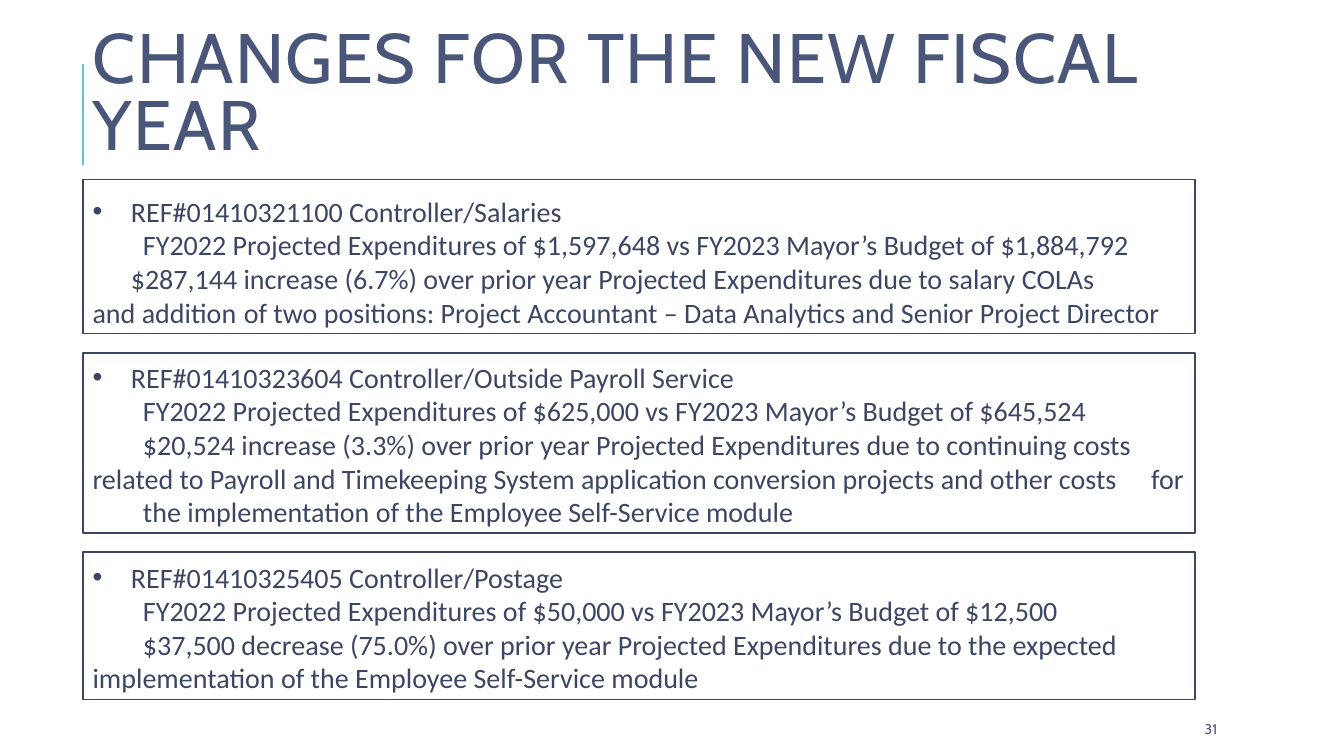
from dataclasses import dataclass

from lxml import etree
from pptx import Presentation
from pptx.dml.color import RGBColor
from pptx.enum.shapes import MSO_CONNECTOR, MSO_SHAPE
from pptx.enum.text import MSO_ANCHOR, MSO_AUTO_SIZE, PP_ALIGN
from pptx.oxml.ns import qn
from pptx.util import Inches, Pt

STRAIGHT = MSO_CONNECTOR.STRAIGHT
RECTANGLE = MSO_SHAPE.RECTANGLE
MIDDLE, BOTTOM = MSO_ANCHOR.MIDDLE, MSO_ANCHOR.BOTTOM
NO_AUTOFIT = MSO_AUTO_SIZE.NONE
LEFT = PP_ALIGN.LEFT
TITLE_ONLY = 5


@dataclass(frozen=True)
class Theme:
    title_font: str = "Cabin"
    body_font: str = "Calibri"
    title_size: int = 50
    body_size: int = 20
    number_size: int = 10
    title_color: str = "495579"
    body_color: str = "3C4663"
    accent: str = "62C7CD"
    paper: str = "FFFFFF"


THEME = Theme()

# Layout in inches: one column, boxes stacked with an equal gap
COLUMN_LEFT, COLUMN_WIDTH = 0.82, 11.03
STACK_TOP, STACK_GAP = 1.78, 0.19
BULLET_INDENT, TAB_STEP = 0.38, 0.5

# Box height, heading, budget line, explanation, first-line indent of explanation
BUDGET_CHANGES = [
    (1.53, "REF#01410321100 Controller/Salaries",
     "\tFY2022 Projected Expenditures of $1,597,648 vs FY2023 Mayor’s Budget of $1,884,792",
     "$287,144 increase (6.7%) over prior year Projected Expenditures due to salary COLAs "
     "\tand addition \tof two positions: Project Accountant – Data Analytics and Senior "
     "Project Director", BULLET_INDENT),
    (1.79, "REF#01410323604 Controller/Outside Payroll Service",
     "\tFY2022 Projected Expenditures of $625,000 vs FY2023 Mayor’s Budget of $645,524",
     "\t$20,524 increase (3.3%) over prior year Projected Expenditures due to continuing costs "
     "\trelated to Payroll and Timekeeping System application conversion projects and other "
     "costs \tfor \tthe implementation of the Employee Self-Service module", 0),
    (1.46, "REF#01410325405 Controller/Postage",
     "\tFY2022 Projected Expenditures of $50,000 vs FY2023 Mayor’s Budget of $12,500",
     "\t$37,500 decrease (75.0%) over prior year Projected Expenditures due to the expected"
     "\timplementation of the Employee Self-Service module", 0),
]


def format_runs(paragraph, font, size, color):
    paragraph.alignment = LEFT
    for run in paragraph.runs:
        run.font.name = font
        run.font.size = Pt(size)
        run.font.color.rgb = RGBColor.from_string(color)


def set_indent(paragraph, margin, first_line, bullet=None):
    properties = paragraph._p.get_or_add_pPr()
    properties.set("marL", str(Inches(margin)))
    properties.set("indent", str(Inches(first_line)))
    properties.set("defTabSz", str(Inches(TAB_STEP)))
    if bullet:
        etree.SubElement(properties, qn("a:buFont")).set("typeface", "Arial")
        etree.SubElement(properties, qn("a:buChar")).set("char", bullet)


def add_title(slide, text):
    title = slide.shapes.title
    title.left, title.top = Inches(COLUMN_LEFT), Inches(0.14)
    title.width, title.height = Inches(10.63), Inches(1.64)
    frame = title.text_frame
    frame.text = text
    frame.word_wrap = True
    frame.auto_size = NO_AUTOFIT
    frame.vertical_anchor = MIDDLE
    paragraph = frame.paragraphs[0]
    paragraph.line_spacing = 0.8
    format_runs(paragraph, THEME.title_font, THEME.title_size, THEME.title_color)
    for run in paragraph.runs:
        run.font._element.set("spc", "100")


def add_title_rule(slide):
    rule = slide.shapes.add_connector(
        STRAIGHT, Inches(COLUMN_LEFT), Inches(1.64), Inches(COLUMN_LEFT), Inches(0.64))
    rule.line.color.rgb = RGBColor.from_string(THEME.accent)
    rule.line.width = Pt(1.5)
    etree.SubElement(rule._element.spPr, qn("a:effectLst"))


def add_change_box(slide, top, height, heading, budget, explanation, first_line):
    box = slide.shapes.add_shape(
        RECTANGLE, Inches(COLUMN_LEFT), Inches(top), Inches(COLUMN_WIDTH), Inches(height))
    box.shadow.inherit = False
    box.fill.solid()
    box.fill.fore_color.rgb = RGBColor.from_string(THEME.paper)
    box.line.color.rgb = RGBColor.from_string(THEME.body_color)
    box.line.width = Pt(1.25)
    frame = box.text_frame
    frame.word_wrap = True
    frame.vertical_anchor = BOTTOM
    frame.text = "\n".join((heading, budget, explanation))
    heading_line, budget_line, explanation_line = frame.paragraphs
    for paragraph in frame.paragraphs:
        format_runs(paragraph, THEME.body_font, THEME.body_size, THEME.body_color)
    set_indent(heading_line, BULLET_INDENT, -BULLET_INDENT, "•")
    set_indent(budget_line, 0, 0)
    set_indent(explanation_line, 0, first_line)


def add_slide_number(slide, number):
    box = slide.shapes.add_textbox(
        Inches(COLUMN_LEFT + COLUMN_WIDTH), Inches(7.08), Inches(1.06), Inches(0.3))
    frame = box.text_frame
    frame.word_wrap = True
    frame.vertical_anchor = MIDDLE
    frame.text = number
    format_runs(frame.paragraphs[0], THEME.title_font, THEME.number_size, THEME.title_color)


def main():
    presentation = Presentation()
    presentation.slide_width = Inches(13.33)
    presentation.slide_height = Inches(7.5)
    slide = presentation.slides.add_slide(presentation.slide_layouts[TITLE_ONLY])

    # Heading
    add_title_rule(slide)
    add_title(slide, "CHANGES FOR THE NEW FISCAL YEAR")

    # Stack of budget changes
    top = STACK_TOP
    for height, *content in BUDGET_CHANGES:
        add_change_box(slide, top, height, *content)
        top += height + STACK_GAP

    # Footer
    add_slide_number(slide, "31")
    presentation.save("out.pptx")


if __name__ == "__main__":
    main()
